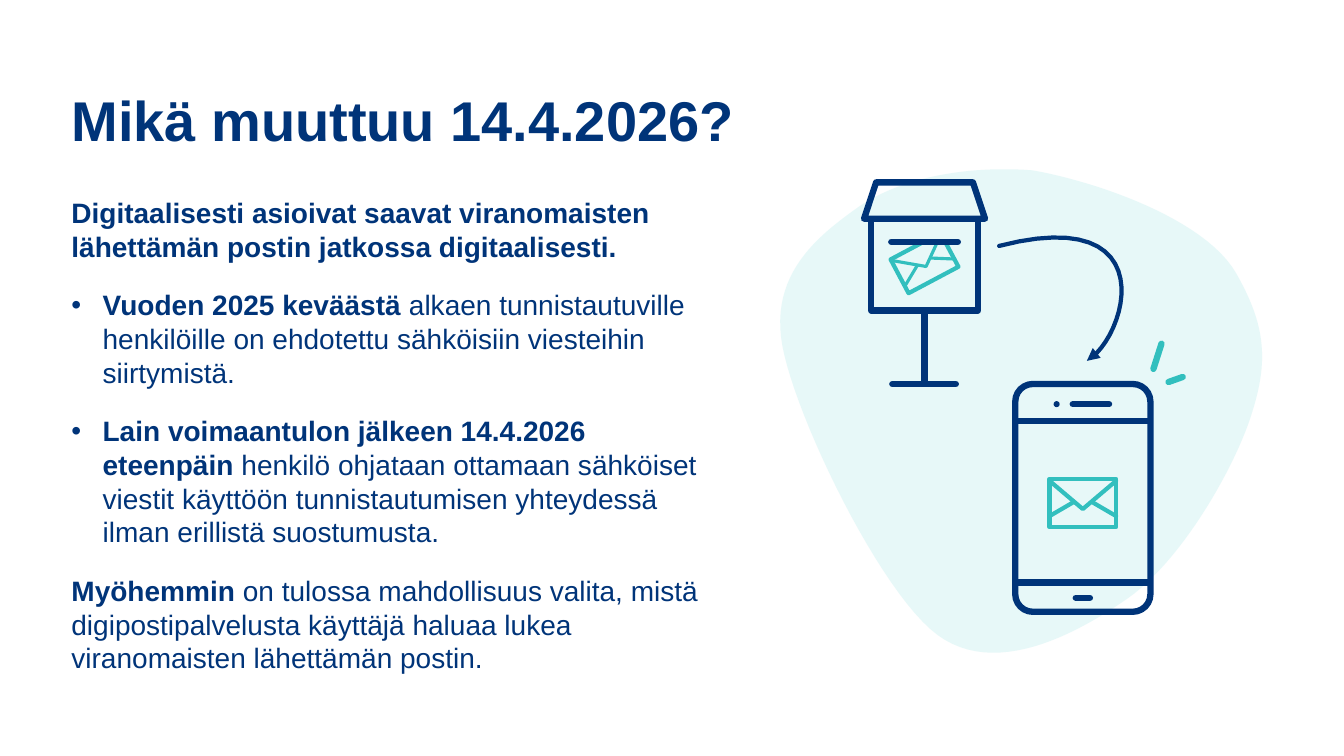
from lxml import etree
from pptx import Presentation
from pptx import util as u
from pptx.dml.color import RGBColor
from pptx.enum import shapes, text
from pptx.oxml.ns import qn

NAVY = RGBColor(0x00, 0x34, 0x79)
TEAL = RGBColor(0x32, 0xBF, 0xBE)
MINT = RGBColor(0xE1, 0xF7, 0xF7)
FONT = "Arial"
LETTER_TILT = -28

BODY = [
    (False, [("Digitaalisesti asioivat saavat viranomaisten lähettämän postin jatkossa digitaalisesti.", True)]),
    (True, [("Vuoden 2025 keväästä ", True),
            ("alkaen tunnistautuville \nhenkilöille on ehdotettu sähköisiin viesteihin siirtymistä.", False)]),
    (True, [("Lain voimaantulon jälkeen 14.4.2026 eteenpäin ", True),
            ("henkilö ohjataan ottamaan sähköiset viestit käyttöön tunnistautumisen yhteydessä "
             "ilman erillistä suostumusta.", False)]),
    (False, [("Myöhemmin", True),
             (" on tulossa mahdollisuus valita, mistä digipostipalvelusta käyttäjä haluaa lukea "
              "viranomaisten lähettämän postin.", False)]),
]


def bezier(start, first, second, end, steps=24):
    points = []
    for step in range(1, steps + 1):
        t = step / steps
        weights = ((1 - t) ** 3, 3 * t * (1 - t) ** 2, 3 * t * t * (1 - t), t ** 3)
        points.append(tuple(sum(w * p[axis] for w, p in zip(weights, (start, first, second, end)))
                            for axis in (0, 1)))
    return points


def curve(start, segments):
    points = [start]
    for first, second, end in segments:
        points += bezier(points[-1], first, second, end)
    return points


def stroke(shape, color, width):
    shape.line.color.rgb = color
    shape.line.width = u.Pt(width)
    line = shape.line._get_or_add_ln()
    line.set("cap", "rnd")
    etree.SubElement(line, qn("a:round"))
    return line


def place(origin, point):
    return [u.Inches(base + offset) for base, offset in zip(origin, point)]


def outline(page, origin, points, closed=False):
    placed = [place(origin, point) for point in points]
    builder = page.shapes.build_freeform(*placed[0], scale=1.0)
    builder.add_line_segments(placed[1:], close=closed)
    shape = builder.convert_to_shape()
    shape.shadow.inherit = False
    shape.fill.background()
    return shape


def rule(page, origin, start, end, color, width):
    link = page.shapes.add_connector(shapes.MSO_CONNECTOR.STRAIGHT,
                                     *place(origin, start), *place(origin, end))
    stroke(link, color, width)
    etree.SubElement(link._element.spPr, qn("a:effectLst"))


def preset(page, kind, origin, corner, size):
    shape = page.shapes.add_shape(kind, *place(origin, corner), *map(u.Inches, size))
    shape.shadow.inherit = False
    shape.fill.background()
    return shape


def add_text(para, words, size, bold):
    for index, part in enumerate(words.split("\n")):
        if index:
            para.add_line_break()
        span = para.add_run()
        span.text = part
        span.font.name = FONT
        span.font.size = u.Pt(size)
        span.font.bold = bold
        span.font.color.rgb = NAVY


def text_frame(page, left, top, width, height):
    box = page.shapes.add_textbox(*map(u.Inches, (left, top, width, height)))
    box.text_frame.word_wrap = True
    box.text_frame.vertical_anchor = text.MSO_ANCHOR.TOP
    return box.text_frame


def title(page, box):
    frame = text_frame(page, *box)
    add_text(frame.paragraphs[0], "Mikä muuttuu 14.4.2026?", 40, True)


def body(page, box):
    frame = text_frame(page, *box)
    frame.margin_right = u.Inches(0.2)
    for index, (bulleted, spans) in enumerate(BODY):
        para = frame.add_paragraph() if index else frame.paragraphs[0]
        para.space_before = u.Pt(6 if index else 0)
        para.space_after = u.Pt(12)
        if bulleted:
            props = para._p.get_or_add_pPr()
            props.set("marL", str(u.Inches(0.31)))
            props.set("indent", str(-u.Inches(0.31)))
            etree.SubElement(props, qn("a:buFont"), typeface=FONT)
            etree.SubElement(props, qn("a:buChar"), char="•")
        for words, bold in spans:
            add_text(para, words, 20, bold)


def backdrop(page, origin):
    blob = outline(page, origin, curve((0.06, 1.83), [
        ((0.19, 2.54), (1.03, 4.28), (1.6, 4.7)),
        ((2.17, 5.12), (2.96, 4.7), (3.48, 4.34)),
        ((4, 3.98), (4.52, 3.09), (4.7, 2.55)),
        ((4.88, 2.01), (4.87, 1.65), (4.56, 1.11)),
        ((4.25, 0.57), (3.17, 0.2), (2.54, 0.09)),
        ((1.9, 0.04), (1.24, 0.16), (0.82, 0.45)),
        ((0.41, 0.74), (-0.07, 1.12), (0.06, 1.83)),
    ]), closed=True)
    blob.fill.solid()
    blob.fill.fore_color.rgb = MINT
    blob.line.fill.background()
    color = blob._element.spPr.find(".//" + qn("a:srgbClr"))
    etree.SubElement(color, qn("a:alpha"), val="80000")


def letter(page, origin):
    flap = outline(page, origin, [(0.3, 0.65), (0.57, 0.86), (0.78, 0.7)])
    sheet = outline(page, origin, [(0.32, 0.61), (0.68, 0.61), (0.88, 0.72), (0.88, 0.99), (0.32, 0.99)],
                    closed=True)
    for shape, width in ((flap, 2.25), (sheet, 3)):
        shape.rotation = LETTER_TILT
        stroke(shape, TEAL, width)
    for start, end in (((0.41, 1.02), (0.53, 0.82)), ((0.9, 0.76), (0.66, 0.75))):
        rule(page, origin, start, end, TEAL, 2.25)


def mailbox(page, origin):
    letter(page, origin)
    walls = [(0.07, 0.37), (0.07, 1.27), (1.13, 1.27), (1.13, 0.37)]
    roof = [(0, 0.36), (1.2, 0.36), (1.08, 0), (0.12, 0)]
    stroke(outline(page, origin, walls), NAVY, 4.5)
    stroke(outline(page, origin, roof, closed=True), NAVY, 4.5)
    slot, pole, foot = ((0.27, 0.59), (0.93, 0.59)), ((0.6, 1.3), (0.6, 1.98)), ((0.28, 2), (0.91, 2))
    for start, end in (slot, pole, foot):
        rule(page, origin, start, end, NAVY, 4.5)


def envelope(page, origin):
    stroke(preset(page, shapes.MSO_SHAPE.RECTANGLE, origin, (0, 0), (0.66, 0.48)), TEAL, 3)
    stroke(outline(page, origin, [(0, 0.02), (0.33, 0.3), (0.66, 0.02)]), TEAL, 3)
    for edge, inner in ((0, 0.24), (0.66, 0.42)):
        rule(page, origin, (edge, 0.37), (inner, 0.23), TEAL, 3)


def phone(page, origin):
    case = preset(page, shapes.MSO_SHAPE.ROUNDED_RECTANGLE, origin, (0, 0), (1.34, 2.26))
    case.adjustments[0] = 0.13
    stroke(case, NAVY, 4.5)
    for left, right, y in ((0.01, 1.33, 0.37), (0.01, 1.33, 1.97), (0.6, 0.74, 2.12), (0.57, 0.93, 0.2)):
        rule(page, origin, (left, y), (right, y), NAVY, 4.5)
    camera = preset(page, shapes.MSO_SHAPE.OVAL, origin, (0.38, 0.17), (0.06, 0.06))
    camera.fill.solid()
    camera.fill.fore_color.rgb = NAVY
    camera.line.fill.background()
    for start, end in (((1.52, -0.02), (1.66, -0.07)), ((1.37, -0.15), (1.45, -0.4))):
        rule(page, origin, start, end, TEAL, 4.5)
    envelope(page, (origin[0] + 0.34, origin[1] + 0.94))


def delivery_arrow(page, origin):
    bend = curve((0, 0), [((1.66, -0.43), (1.26, 0.92), (0.87, 1.14))])
    line = stroke(outline(page, origin, bend), NAVY, 3)
    etree.SubElement(line, qn("a:tailEnd"), type="triangle")


def illustration(page, left, top):
    backdrop(page, (left, top))
    mailbox(page, (left + 0.87, top + 0.21))
    phone(page, (left + 2.37, top + 2.21))
    delivery_arrow(page, (left + 2.21, top + 0.84))


def main():
    deck = Presentation()
    deck.slide_width, deck.slide_height = u.Inches(13.33), u.Inches(7.5)
    page = deck.slides.add_slide(deck.slide_layouts[6])
    body(page, (0.61, 1.89, 6.68, 4.72))
    title(page, (0.61, 0.8, 6.85, 1.1))
    illustration(page, 7.7, 1.6)
    deck.save("out.pptx")


if __name__ == "__main__":
    main()
